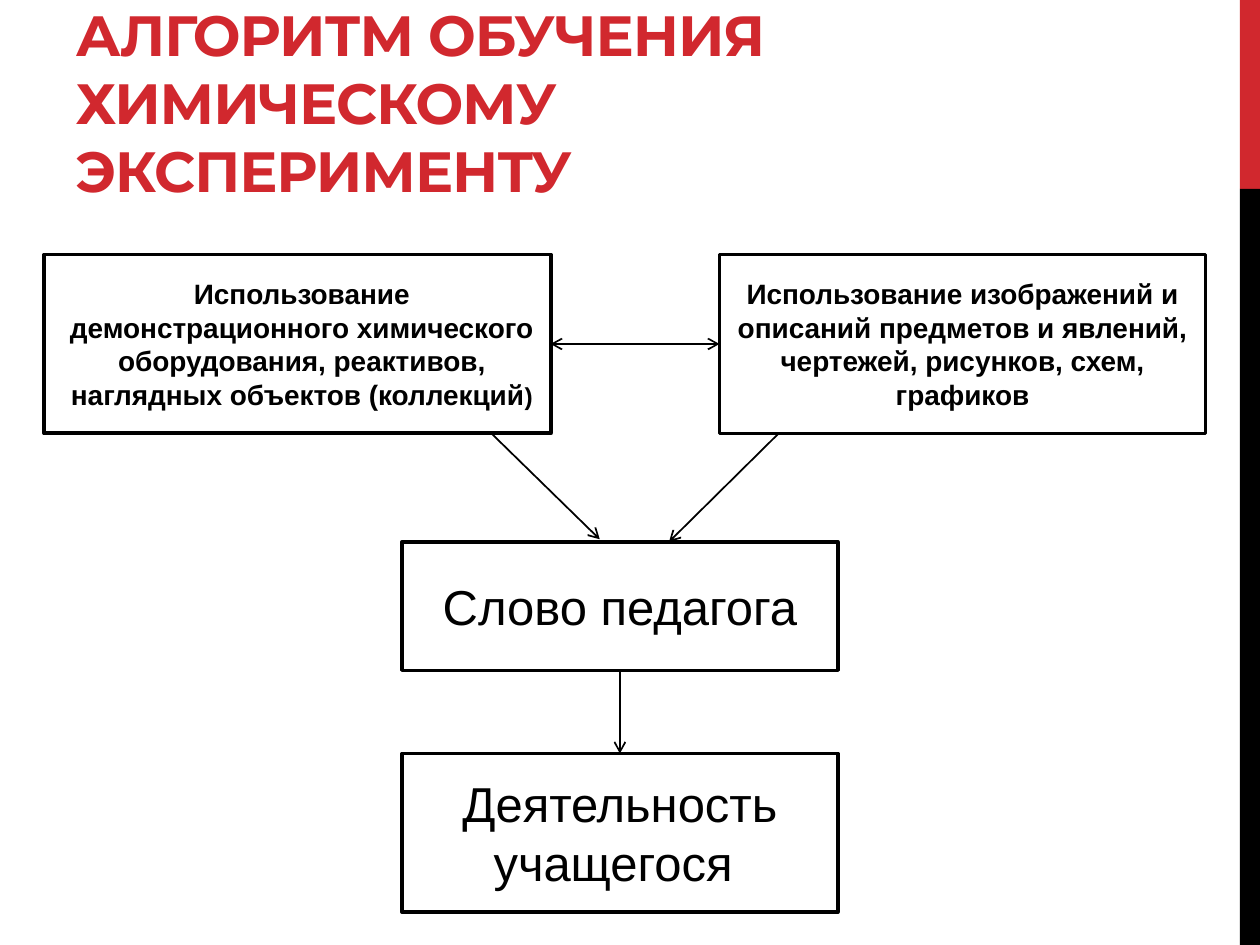
from lxml.etree import SubElement
from pptx import Presentation
from pptx.dml.color import RGBColor
from pptx.enum.shapes import MSO_CONNECTOR, MSO_SHAPE
from pptx.enum.text import MSO_ANCHOR, MSO_AUTO_SIZE, PP_ALIGN
from pptx.oxml.ns import qn
from pptx.util import Inches, Pt

RED = RGBColor(0xD1, 0x28, 0x2E)
BLACK = RGBColor(0, 0, 0)
WHITE = RGBColor(0xFF, 0xFF, 0xFF)


def apply_format(target, values):
    for name, value in values.items():
        setattr(target, name, value)


class DiagramSlide:
    title_font = {"name": "Montserrat", "size": Pt(32.4), "bold": True}
    body_font = {"name": "Arial"}
    box_frame = {"word_wrap": True, "vertical_anchor": MSO_ANCHOR.MIDDLE}

    def __init__(self, presentation):
        self.slide = presentation.slides.add_slide(presentation.slide_layouts[5])

    def add_title(self, text, left, top, width, height):
        title = self.slide.shapes.title
        apply_format(title, {"left": Inches(left), "top": Inches(top),
                             "width": Inches(width), "height": Inches(height)})
        apply_format(title.text_frame, {"word_wrap": True,
                                        "auto_size": MSO_AUTO_SIZE.NONE,
                                        "vertical_anchor": MSO_ANCHOR.BOTTOM})
        paragraph = title.text_frame.paragraphs[0]
        paragraph.alignment = PP_ALIGN.LEFT
        run = paragraph.add_run()
        run.text = text
        apply_format(run.font, self.title_font)
        run.font.color.rgb = RED
        run._r.get_or_add_rPr().set("spc", "-60")

    def add_rectangle(self, left, top, width, height, fill):
        shape = self.slide.shapes.add_shape(
            MSO_SHAPE.RECTANGLE, Inches(left), Inches(top), Inches(width), Inches(height))
        shape.shadow.inherit = False
        shape.fill.solid()
        shape.fill.fore_color.rgb = fill
        shape.line.fill.background()
        return shape

    def add_box(self, runs, left, top, width, height, bold=False, border=2):
        """Add a bordered box; runs is a list of (text, point size)."""
        shape = self.add_rectangle(left, top, width, height, WHITE)
        shape.line.color.rgb = BLACK
        shape.line.width = Pt(border)
        apply_format(shape.text_frame, self.box_frame)
        paragraph = shape.text_frame.paragraphs[0]
        apply_format(paragraph, {"alignment": PP_ALIGN.CENTER,
                                 "space_before": Pt(0.2 * runs[0][1])})
        for text, size in runs:
            run = paragraph.add_run()
            run.text = text
            apply_format(run.font, {**self.body_font, "size": Pt(size), "bold": bold})
            run.font.color.rgb = BLACK
        return paragraph

    def add_arrow(self, start, end, both_ends=False):
        connector = self.slide.shapes.add_connector(
            MSO_CONNECTOR.STRAIGHT, *(Inches(value) for value in (*start, *end)))
        connector.line.color.rgb = BLACK
        connector.line.width = Pt(1)
        line = connector.line._get_or_add_ln()
        for tag in ("a:headEnd", "a:tailEnd") if both_ends else ("a:tailEnd",):
            SubElement(line, qn(tag), type="arrow")
        SubElement(connector._element.spPr, qn("a:effectLst"))


def main():
    presentation = Presentation()
    apply_format(presentation, {"slide_width": Inches(10), "slide_height": Inches(7.5)})
    diagram = DiagramSlide(presentation)

    # Side band
    diagram.add_rectangle(9.84, 0, 0.16, 1.5, RED)
    diagram.add_rectangle(9.84, 1.5, 0.16, 6, BLACK)

    diagram.add_title("АЛГОРИТМ ОБУЧЕНИЯ ХИМИЧЕСКОМУ ЭКСПЕРИМЕНТУ", 0.5, 0.17, 6.33, 1.5)

    # Upper row: teaching aids
    equipment = diagram.add_box(
        [("Использование демонстрационного химического оборудования, реактивов, "
          "наглядных объектов (коллекций", 16), (")", 14)],
        0.35, 2.02, 4.02, 1.42, bold=True, border=2.25)
    equipment.space_after = Pt(6)
    equipment._p.get_or_add_pPr().set("marL", str(Inches(0.07)))
    diagram.add_box(
        [("Использование изображений и описаний предметов и явлений, "
          "чертежей, рисунков, схем, графиков", 16)],
        5.71, 2.02, 3.86, 1.42, bold=True)

    # Central column: teacher, then student
    diagram.add_box([("Слово педагога", 28)], 3.19, 4.3, 3.46, 1.02)
    diagram.add_box([("Деятельность учащегося ", 28)], 3.19, 5.98, 3.46, 1.26)

    # Links between the boxes
    diagram.add_arrow((4.37, 2.73), (5.71, 2.73), both_ends=True)
    diagram.add_arrow((3.9, 3.44), (4.76, 4.28))
    diagram.add_arrow((6.18, 3.44), (5.31, 4.3))
    diagram.add_arrow((4.92, 5.33), (4.92, 5.98))

    presentation.save("out.pptx")


if __name__ == "__main__":
    main()
